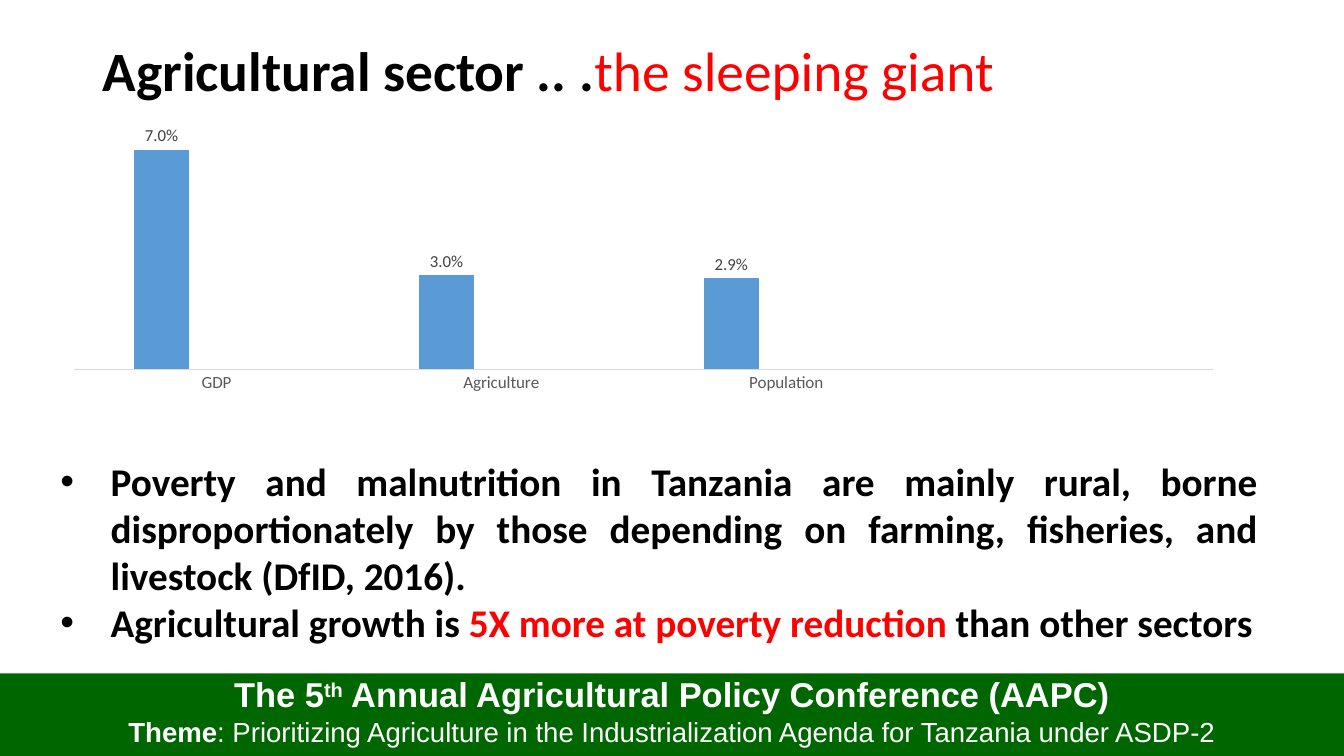
"""Build the slide on growth in the agricultural sector."""
from dataclasses import dataclass

import lxml.etree
import pptx
import pptx.chart.data
import pptx.dml.color
import pptx.enum.chart
import pptx.enum.shapes
import pptx.enum.text
import pptx.util
from pptx.oxml.ns import qn

Inches = pptx.util.Inches
Align = pptx.enum.text.PP_ALIGN
Anchor = pptx.enum.text.MSO_ANCHOR

BLACK, WHITE, RED, GREEN = "000000", "FFFFFF", "FF0000", "006600"


@dataclass(frozen=True)
class Piece:
    text: str
    color: str = BLACK
    bold: bool = True
    superscript: bool = False


@dataclass(frozen=True)
class Line:
    pieces: list[Piece]
    size: float
    font: str = "Calibri"
    align: Align = Align.LEFT
    spacing: float = 1.0
    bullet: bool = False


TITLE = [Line([Piece("Agricultural sector .. ."),
               Piece("the sleeping giant", RED, False)], 39.6, spacing=0.9)]
POINTS = [
    Line(pieces, 28, align=Align.JUSTIFY, bullet=True)
    for pieces in (
        [Piece("Poverty and malnutrition in Tanzania are mainly rural, borne disproportionately "
               "by those depending on farming, fisheries, and livestock (DfID, 2016).")],
        [Piece("Agricultural growth is "), Piece("5X more at poverty reduction ", RED),
         Piece("than other sectors")],
    )
]
FOOTER = [
    Line([Piece("The 5", WHITE), Piece("th", WHITE, superscript=True),
          Piece(" Annual Agricultural Policy Conference (AAPC)", WHITE)],
         24.6, "Arial", Align.CENTER),
    Line([Piece("Theme", WHITE),
          Piece(": Prioritizing Agriculture in the Industrialization Agenda for Tanzania "
                "under ASDP-2", WHITE, False)],
         19.7, "Arial", Align.CENTER),
]
GROWTH = {"GDP": 0.07, "Agriculture": 0.03, "Population": 0.029, "": None}
SERIES_COLORS = ["5B9BD5", "ED7D31", "A5A5A5"]
PLOT_LAYOUT = {"x": 0.02, "y": 0.03, "w": 0.96, "h": 0.87}


def rgb(color: str) -> pptx.dml.color.RGBColor:
    return pptx.dml.color.RGBColor.from_string(color)


def style_font(font, size: float, color: str, name: str = "Calibri") -> None:
    font.size = pptx.util.Pt(size)
    font.name = name
    font.color.rgb = rgb(color)


def add_bullet(paragraph) -> None:
    properties = paragraph._p.get_or_add_pPr()
    properties.set("marL", str(Inches(0.5)))
    properties.set("indent", str(Inches(-0.5)))
    lxml.etree.SubElement(properties, qn("a:buFont"), typeface="Arial")
    lxml.etree.SubElement(properties, qn("a:buChar"), char="•")


def write_lines(frame, lines: list[Line], anchor: Anchor) -> None:
    frame.word_wrap = True
    frame.vertical_anchor = anchor
    for index, line in enumerate(lines):
        paragraph = frame.add_paragraph() if index else frame.paragraphs[0]
        if line.bullet:
            add_bullet(paragraph)
        paragraph.alignment = line.align
        paragraph.line_spacing = line.spacing
        paragraph.font.size = pptx.util.Pt(line.size)
        paragraph.font.name = line.font
        for piece in line.pieces:
            run = paragraph.add_run()
            run.text = piece.text
            run.font.bold = piece.bold
            run.font.color.rgb = rgb(piece.color)
            if piece.superscript:
                run._r.get_or_add_rPr().set("baseline", "30000")


def add_footer(slide) -> None:
    band = slide.shapes.add_shape(pptx.enum.shapes.MSO_SHAPE.RECTANGLE,
                                  Inches(0), Inches(6.68), Inches(13.33), Inches(0.82))
    band.shadow.inherit = False
    band.fill.solid()
    band.fill.fore_color.rgb = rgb(GREEN)
    band.line.fill.background()
    band.text_frame.margin_top = Inches(0)
    write_lines(band.text_frame, FOOTER, Anchor.TOP)


def add_text(slide, left: float, top: float, width: float, height: float,
             lines: list[Line], anchor: Anchor) -> None:
    box = slide.shapes.add_textbox(Inches(left), Inches(top), Inches(width), Inches(height))
    write_lines(box.text_frame, lines, anchor)


def set_plot_layout(chart) -> None:
    plot_area = chart._chartSpace.chart.plotArea
    for old_layout in plot_area.findall(qn("c:layout")):
        plot_area.remove(old_layout)
    layout = lxml.etree.Element(qn("c:layout"))
    plot_area.insert(0, layout)
    manual = lxml.etree.SubElement(layout, qn("c:manualLayout"))
    lxml.etree.SubElement(manual, qn("c:layoutTarget"), val="inner")
    for side in "xy":
        lxml.etree.SubElement(manual, qn(f"c:{side}Mode"), val="edge")
    for side, share in PLOT_LAYOUT.items():
        lxml.etree.SubElement(manual, qn(f"c:{side}"), val=str(share))


def add_growth_chart(slide) -> None:
    data = pptx.chart.data.CategoryChartData(number_format="0.0%")
    data.categories = list(GROWTH)
    for number in range(1, len(SERIES_COLORS) + 1):
        values = GROWTH.values() if number == 1 else [None] * len(GROWTH)
        data.add_series(f"Series {number}", values)
    chart = slide.shapes.add_chart(pptx.enum.chart.XL_CHART_TYPE.COLUMN_CLUSTERED,
                                   Inches(0.5), Inches(1.09), Inches(11.77), Inches(2.86),
                                   data).chart
    chart.has_legend = False
    chart.has_title = False
    style_font(chart.font, 10, BLACK)
    set_plot_layout(chart)

    category_axis = chart.category_axis
    category_axis.major_tick_mark = pptx.enum.chart.XL_TICK_MARK.NONE
    category_axis.format.line.color.rgb = rgb("D9D9D9")
    category_axis.format.line.width = pptx.util.Pt(0.75)
    style_font(category_axis.tick_labels.font, 12.2, "595959")
    value_axis = chart.value_axis
    value_axis.visible = False
    value_axis.has_major_gridlines = False
    value_axis.minimum_scale = 0
    value_axis.maximum_scale = 0.08

    plot = chart.plots[0]
    plot.gap_width = 219
    plot.overlap = 0
    plot.vary_by_categories = False
    for series, color in zip(plot.series, SERIES_COLORS):
        series.format.fill.solid()
        series.format.fill.fore_color.rgb = rgb(color)
    labels = plot.series[0].data_labels
    labels.show_value = True
    labels.number_format = "0.0%"
    labels.number_format_is_linked = False
    labels.position = pptx.enum.chart.XL_LABEL_POSITION.OUTSIDE_END
    style_font(labels.font, 12, "404040")


def main() -> None:
    presentation = pptx.Presentation()
    presentation.slide_width = Inches(13.33)
    presentation.slide_height = Inches(7.5)
    slide = presentation.slides.add_slide(presentation.slide_layouts[6])
    add_footer(slide)
    add_text(slide, 0.92, 0.4, 11.5, 0.66, TITLE, Anchor.MIDDLE)
    add_growth_chart(slide)
    add_text(slide, 0.5, 4.49, 12.07, 1.99, POINTS, Anchor.TOP)
    presentation.save("out.pptx")


if __name__ == "__main__":
    main()
